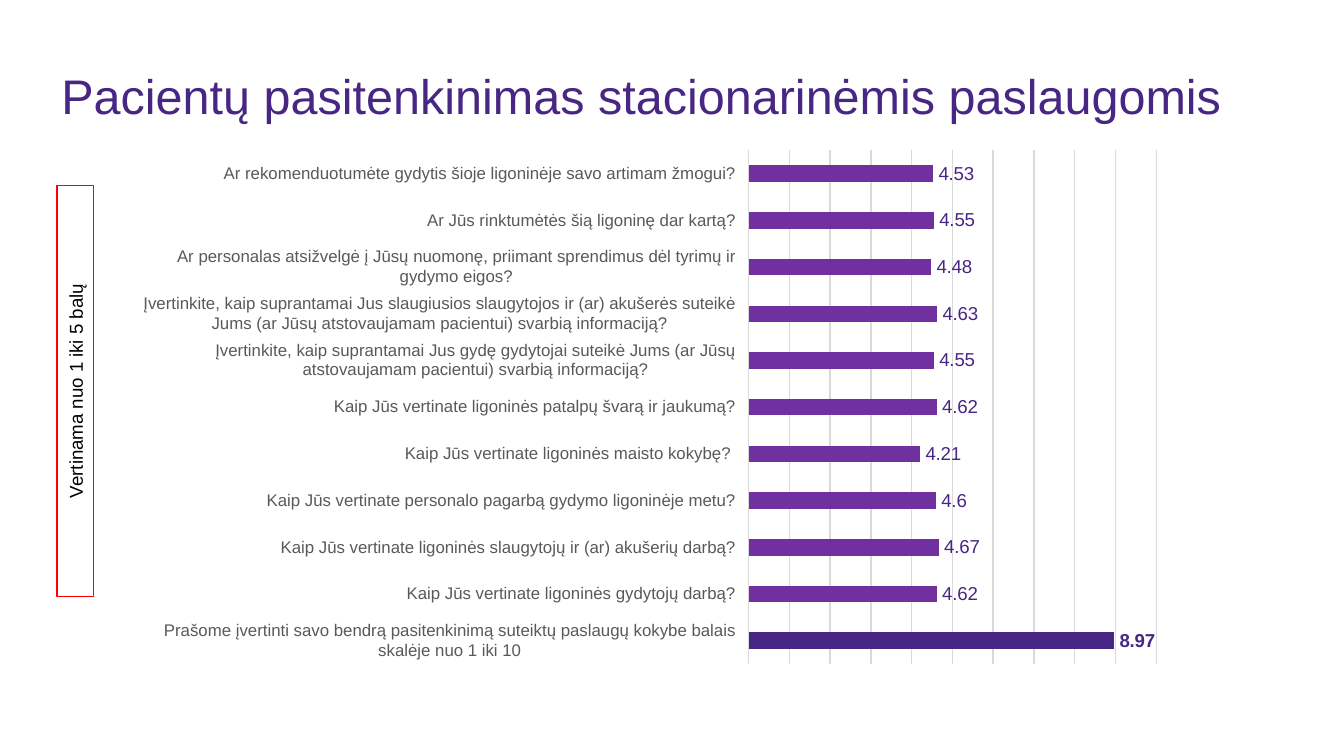
from pptx import Presentation
from pptx.chart.data import CategoryChartData
from pptx.dml.color import RGBColor
from pptx.enum.chart import XL_CHART_TYPE, XL_LABEL_POSITION, XL_TICK_LABEL_POSITION, XL_TICK_MARK
from pptx.enum.shapes import MSO_SHAPE
from pptx.enum.text import MSO_ANCHOR, PP_ALIGN
from pptx.oxml import parse_xml
from pptx.oxml.ns import nsdecls
from pptx.util import Cm, Pt


def color(value):
    return RGBColor.from_string(value)


def format_font(font, size, value, bold=False):
    for name, setting in {"name": "Arial", "size": Pt(size), "bold": bold}.items():
        setattr(font, name, setting)
    font.color.rgb = color(value)


deck = Presentation()
deck.slide_width, deck.slide_height = Cm(25.4), Cm(14.28)
page = deck.slides.add_slide(deck.slide_layouts[6])

title = page.shapes.add_textbox(Cm(0.91), Cm(0.48), Cm(23.32), Cm(2.77))
for name, setting in {"word_wrap": True, "vertical_anchor": MSO_ANCHOR.MIDDLE}.items():
    setattr(title.text_frame, name, setting)
para = title.text_frame.paragraphs[0]
para.line_spacing = 0.9
span = para.add_run()
span.text = "Pacientų pasitenkinimas stacionarinėmis paslaugomis"
format_font(span.font, 26, "482683")

scale_box = page.shapes.add_shape(MSO_SHAPE.RECTANGLE, Cm(-2.46), Cm(7.04), Cm(7.77), Cm(0.69))
scale_box.rotation = 270
scale_box.shadow.inherit = False
scale_box.fill.background()
scale_box.line.color.rgb = color("FF0000")
scale_box.line.width = Pt(0.75)
scale_box.text_frame.word_wrap = True
para = scale_box.text_frame.paragraphs[0]
para.alignment = PP_ALIGN.CENTER
span = para.add_run()
span.text = "Vertinama nuo 1 iki 5 balų"
format_font(span.font, 10, "000000")

ratings = [
    ("Prašome įvertinti savo bendrą pasitenkinimą suteiktų paslaugų kokybe balais skalėje nuo 1 iki 10", 8.97),
    ("Kaip Jūs vertinate ligoninės gydytojų darbą?", 4.62),
    ("Kaip Jūs vertinate ligoninės slaugytojų ir (ar) akušerių darbą?", 4.67),
    ("Kaip Jūs vertinate personalo pagarbą gydymo ligoninėje metu?", 4.6),
    ("Kaip Jūs vertinate ligoninės maisto kokybę? ", 4.21),
    ("Kaip Jūs vertinate ligoninės patalpų švarą ir jaukumą?", 4.62),
    ("Įvertinkite, kaip suprantamai Jus gydę gydytojai suteikė Jums (ar Jūsų atstovaujamam pacientui) "
     "svarbią informaciją?", 4.55),
    ("Įvertinkite, kaip suprantamai Jus slaugiusios slaugytojos ir (ar) akušerės suteikė Jums "
     "(ar Jūsų atstovaujamam pacientui) svarbią informaciją?", 4.63),
    ("Ar personalas atsižvelgė į Jūsų nuomonę, priimant sprendimus dėl tyrimų ir gydymo eigos?", 4.48),
    ("Ar Jūs rinktumėtės šią ligoninę dar kartą?", 4.55),
    ("Ar rekomenduotumėte gydytis šioje ligoninėje savo artimam žmogui?", 4.53),
]
data = CategoryChartData()
data.categories = [question for question, score in ratings]
data.add_series("Series 1", [score for question, score in ratings])
chart = page.shapes.add_chart(
    XL_CHART_TYPE.BAR_CLUSTERED, Cm(2.49), Cm(2.64), Cm(19.76), Cm(10.11), data
).chart
for name, setting in {"has_legend": False, "has_title": False}.items():
    setattr(chart, name, setting)
format_font(chart.font, 10, "000000")

questions = chart.category_axis
for name, setting in {
    "major_tick_mark": XL_TICK_MARK.NONE,
    "minor_tick_mark": XL_TICK_MARK.NONE,
    "tick_label_position": XL_TICK_LABEL_POSITION.LOW,
    "has_major_gridlines": False,
}.items():
    setattr(questions, name, setting)
format_font(questions.tick_labels.font, 9, "595959")

scores = chart.value_axis
for name, setting in {
    "minimum_scale": 0, "maximum_scale": 10, "major_unit": 1,
    "has_major_gridlines": True, "visible": False,
}.items():
    setattr(scores, name, setting)
for line in (questions.format.line, scores.major_gridlines.format.line):
    line.color.rgb = color("D9D9D9")
    line.width = Pt(0.75)

plot = chart.plots[0]
for name, setting in {"gap_width": 182, "vary_by_categories": False}.items():
    setattr(plot, name, setting)
bars = plot.series[0]
overall = bars.points[0]
for item, value in ((bars, "7030A0"), (overall, "482683")):
    item.format.fill.solid()
    item.format.fill.fore_color.rgb = color(value)

overall_label = overall.data_label
format_font(overall_label.font, 10, "482683", True)
overall_label.position = XL_LABEL_POSITION.OUTSIDE_END
labels = bars.data_labels
for name, setting in {"show_value": True, "position": XL_LABEL_POSITION.OUTSIDE_END}.items():
    setattr(labels, name, setting)
format_font(labels.font, 10, "482683")

plot_area = chart.element.chart.plotArea
for old_layout in plot_area.findall("{*}layout"):
    plot_area.remove(old_layout)
edges = "".join(f'<c:{edge}Mode val="edge"/>' for edge in "xy")
sizes = "".join(f'<c:{side} val="{part}"/>' for side, part in zip("xywh", (0.59, 0.02, 0.39, 0.96)))
plot_area.insert(0, parse_xml(
    f'<c:layout {nsdecls("c")}><c:manualLayout><c:layoutTarget val="inner"/>'
    f"{edges}{sizes}</c:manualLayout></c:layout>"
))

deck.save("out.pptx")
